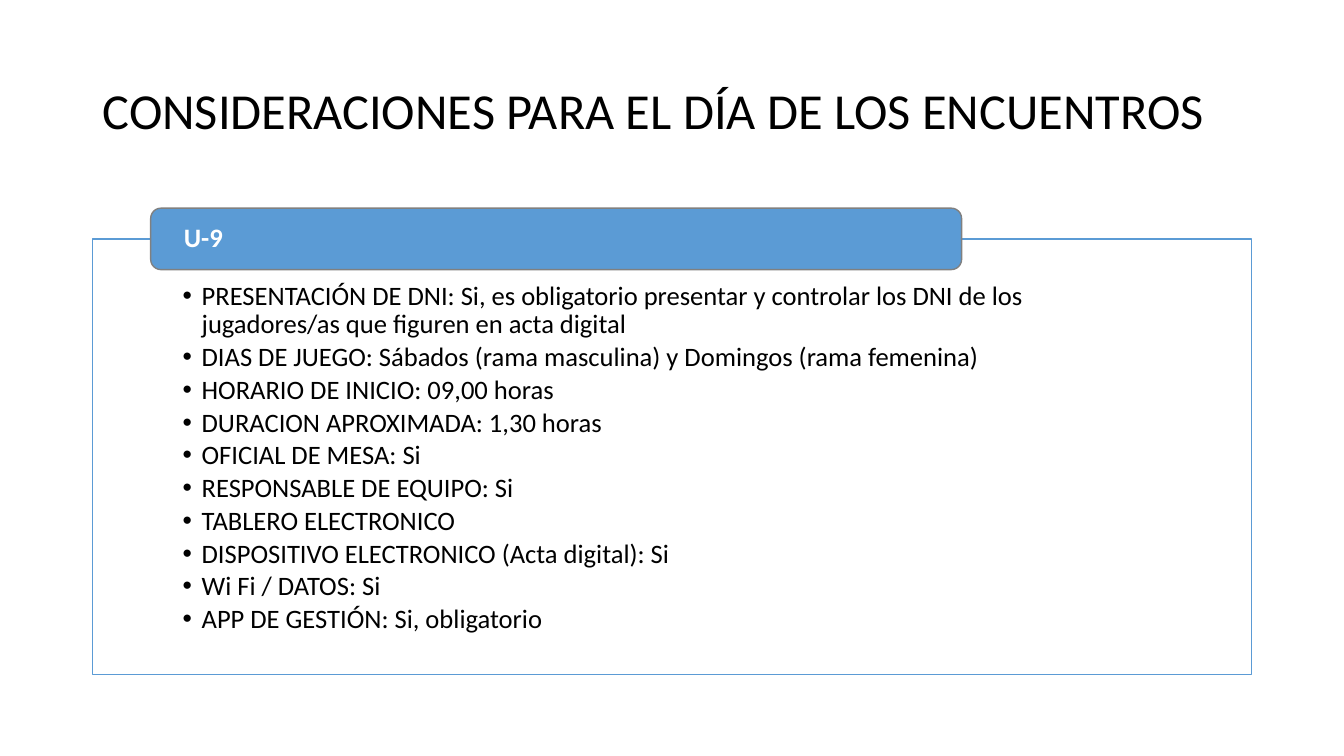
from dataclasses import dataclass

from lxml import etree
from pptx import Presentation
from pptx import util as u
from pptx.dml.color import RGBColor
from pptx.enum import shapes, text
from pptx.oxml import ns


@dataclass(frozen=True)
class Theme:
    font: str = "Calibri"
    ink: str = "000000"
    paper: str = "FFFFFF"
    accent: str = "5B9BD5"
    tab_line: str = "808080"
    title_size: float = 36
    body_size: float = 19
    line_spacing: float = 0.9
    item_gap: float = 2.85
    bullet_indent: float = 0.19


THEME = Theme()
WIDTH, HEIGHT = 13.33, 7.5

TITLE = "CONSIDERACIONES PARA EL DÍA DE LOS ENCUENTROS"
CATEGORY = "U-9"
RULES = [
    "PRESENTACIÓN DE DNI: Si, es obligatorio presentar y controlar los DNI "
    "de los jugadores/as que figuren en acta digital",
    "DIAS DE JUEGO: Sábados (rama masculina) y Domingos (rama femenina)",
    "HORARIO DE INICIO: 09,00 horas",
    "DURACION APROXIMADA: 1,30 horas",
    "OFICIAL DE MESA: Si",
    "RESPONSABLE DE EQUIPO: Si",
    "TABLERO ELECTRONICO",
    "DISPOSITIVO ELECTRONICO (Acta digital): Si",
    "Wi Fi / DATOS: Si",
    "APP DE GESTIÓN: Si, obligatorio",
]


def inches(box):
    return [u.Inches(length) for length in box]


def set_frame(frame, anchor, insets):
    frame.word_wrap = True
    frame.vertical_anchor = anchor
    (frame.margin_left, frame.margin_top,
     frame.margin_right, frame.margin_bottom) = inches(insets)


def write(para, words, size, color, bold=False):
    para.alignment = text.PP_ALIGN.LEFT
    para.line_spacing = THEME.line_spacing
    span = para.add_run()
    span.text = words
    span.font.name = THEME.font
    span.font.size = u.Pt(size)
    span.font.bold = bold
    span.font.color.rgb = RGBColor.from_string(color)


def add_bullet(para):
    indent = u.Inches(THEME.bullet_indent)
    properties = para._p.get_or_add_pPr()
    properties.set("marL", str(indent))
    properties.set("indent", str(-indent))
    etree.SubElement(properties, ns.qn("a:buFont")).set("typeface", "Arial")
    etree.SubElement(properties, ns.qn("a:buChar")).set("char", "•")


def add_panel(page, kind, box, fill, line):
    panel = page.shapes.add_shape(kind, *inches(box))
    panel.shadow.inherit = False
    panel.fill.solid()
    panel.fill.fore_color.rgb = RGBColor.from_string(fill)
    panel.line.color.rgb = RGBColor.from_string(line)
    panel.line.width = u.Pt(1)
    return panel


def add_title(page, box):
    frame = page.shapes.add_textbox(*inches(box)).text_frame
    set_frame(frame, text.MSO_ANCHOR.MIDDLE, (0.1, 0.05, 0.1, 0.05))
    write(frame.paragraphs[0], TITLE, THEME.title_size, THEME.ink)


def add_rules_card(page, box):
    left, top, width, height = box

    # Outlined frame with the bulleted rules
    card = add_panel(page, shapes.MSO_SHAPE.RECTANGLE, box, THEME.paper, THEME.accent)
    alpha = etree.SubElement(
        card.fill._xPr.find(".//" + ns.qn("a:srgbClr")), ns.qn("a:alpha"))
    alpha.set("val", "90000")
    frame = card.text_frame
    set_frame(frame, text.MSO_ANCHOR.TOP, (0.89, 0.43, 0.89, 0.15))
    for index, rule in enumerate(RULES):
        para = frame.add_paragraph() if index else frame.paragraphs[0]
        write(para, rule, THEME.body_size, THEME.ink)
        para.space_after = u.Pt(THEME.item_gap)
        add_bullet(para)

    # Category tab centred on the top edge, 70% of the frame's width
    tab_height = 0.61
    tab_box = (left + width * 0.05, top - tab_height / 2, width * 0.7, tab_height)
    tab = add_panel(page, shapes.MSO_SHAPE.ROUNDED_RECTANGLE, tab_box,
                    THEME.accent, THEME.tab_line)
    set_frame(tab.text_frame, text.MSO_ANCHOR.MIDDLE, (0.3, 0, 0.3, 0))
    write(tab.text_frame.paragraphs[0], CATEGORY, THEME.body_size, THEME.paper, bold=True)


def main():
    deck = Presentation()
    deck.slide_width, deck.slide_height = inches((WIDTH, HEIGHT))
    page = deck.slides.add_slide(deck.slide_layouts[6])
    margin = 0.92
    content_width = WIDTH - 2 * margin
    add_title(page, (margin, 0.4, content_width, 1.45))
    add_rules_card(page, (margin, 2.37, content_width, 4.32))
    deck.save("out.pptx")


if __name__ == "__main__":
    main()
